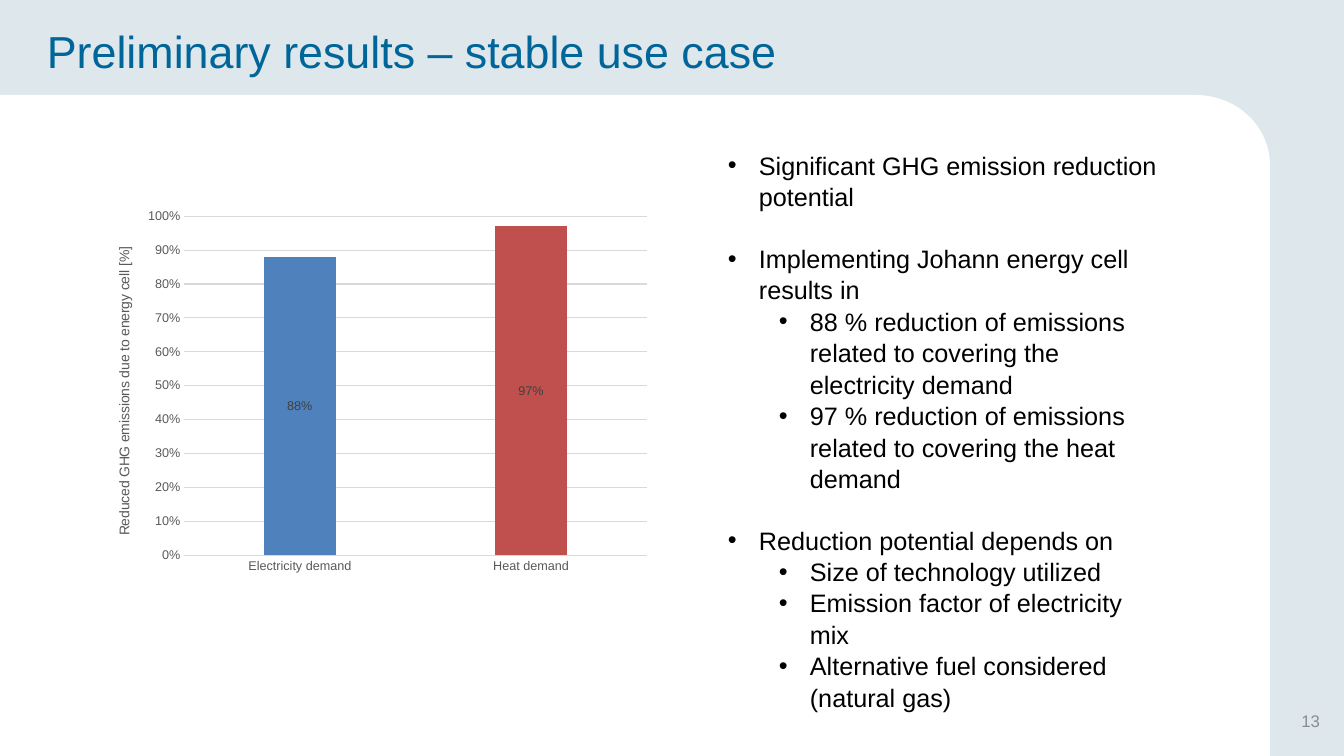
from lxml.etree import SubElement
from pptx import Presentation
from pptx.chart.data import CategoryChartData
from pptx.dml.color import RGBColor
from pptx.enum.chart import XL_CHART_TYPE, XL_LABEL_POSITION, XL_TICK_MARK
from pptx.enum.shapes import MSO_SHAPE
from pptx.enum.text import MSO_ANCHOR, PP_ALIGN
from pptx.oxml.ns import qn
from pptx.util import Emu, Pt

EMU_PER_PX = 914400 / 100.8
FONT = "Arial"
AXIS_GRAY = "595959"
GRID_GRAY = "D9D9D9"
FINDINGS = [
    ("Significant GHG emission reduction potential", []),
    ("Implementing Johann energy cell results in", [
        "88 % reduction of emissions related to covering the electricity demand",
        "97 % reduction of emissions related to covering the heat demand",
    ]),
    ("Reduction potential depends on", [
        "Size of technology utilized",
        "Emission factor of electricity mix",
        "Alternative fuel considered (natural gas)",
    ]),
]


def px(length):
    return Emu(round(length * EMU_PER_PX))


def box(*lengths):
    return [px(length) for length in lengths]


def color(value):
    return RGBColor.from_string(value)


def style_font(font, size, value):
    font.name = FONT
    font.size = Pt(size)
    font.bold = False
    font.color.rgb = color(value)


def add_white_shape(slide, kind, bounds):
    shape = slide.shapes.add_shape(kind, *box(*bounds))
    shape.shadow.inherit = False
    shape.fill.solid()
    shape.fill.fore_color.rgb = color("FFFFFF")
    shape.line.fill.background()


def add_text_frame(slide, bounds, anchor):
    frame = slide.shapes.add_textbox(*box(*bounds)).text_frame
    frame.word_wrap = True
    frame.vertical_anchor = anchor
    return frame


def add_label(slide, bounds, text, size, value, alignment=PP_ALIGN.LEFT):
    paragraph = add_text_frame(slide, bounds, MSO_ANCHOR.MIDDLE).paragraphs[0]
    paragraph.text = text
    paragraph.alignment = alignment
    style_font(paragraph.font, size, value)


def write_bullet(paragraph, text, level):
    paragraph.text = text
    paragraph.level = level
    paragraph.line_spacing = 1.04
    properties = paragraph._p.get_or_add_pPr()
    properties.set("marL", str(px(31 + 51 * level)))
    properties.set("indent", str(px(-31)))
    SubElement(properties, qn("a:buFont"), typeface=FONT)
    SubElement(properties, qn("a:buChar"), char="•")
    style_font(paragraph.font, 18, "000000")


def add_findings(slide, bounds):
    frame = add_text_frame(slide, bounds, MSO_ANCHOR.TOP)
    for index, (finding, details) in enumerate(FINDINGS):
        paragraph = frame.add_paragraph() if index else frame.paragraphs[0]
        if index:
            paragraph.space_before = Pt(21.6)
        write_bullet(paragraph, finding, 0)
        for detail in details:
            write_bullet(frame.add_paragraph(), detail, 1)


def place_plot(chart, x, y, w, h):
    plot_area = chart._chartSpace.chart.plotArea
    layout = plot_area.find(qn("c:layout"))
    if layout is None:
        layout = SubElement(plot_area, qn("c:layout"))
        plot_area.insert(0, layout)
    manual = SubElement(layout, qn("c:manualLayout"))
    settings = dict(layoutTarget="inner", xMode="edge", yMode="edge", x=x, y=y, w=w, h=h)
    for name, value in settings.items():
        SubElement(manual, qn(f"c:{name}"), val=str(value))


def style_line(line, value):
    line.color.rgb = color(value)
    line.width = Pt(0.75)


def style_axes(chart):
    category_axis, value_axis = chart.category_axis, chart.value_axis
    for axis in (category_axis, value_axis):
        axis.major_tick_mark = axis.minor_tick_mark = XL_TICK_MARK.NONE
        style_font(axis.tick_labels.font, 9, AXIS_GRAY)
    style_line(category_axis.format.line, GRID_GRAY)
    value_axis.format.line.fill.background()
    style_line(value_axis.major_gridlines.format.line, GRID_GRAY)
    value_axis.minimum_scale, value_axis.maximum_scale = 0, 1
    value_axis.major_unit = 0.1
    value_axis.tick_labels.number_format = "0%"
    value_axis.tick_labels.number_format_is_linked = False
    title = value_axis.axis_title.text_frame
    title.text = "Reduced GHG emissions due to energy cell [%]"
    style_font(title.paragraphs[0].font, 10, AXIS_GRAY)


def add_reduction_chart(slide, bounds):
    data = CategoryChartData(number_format="0%")
    data.categories = ["Electricity demand", "Heat demand"]
    data.add_series("Series 1", [0.88, 0.97])
    chart = slide.shapes.add_chart(XL_CHART_TYPE.COLUMN_CLUSTERED, *box(*bounds), data).chart
    chart.has_legend = False
    chart.has_title = False
    style_font(chart.font, 10, "000000")
    style_axes(chart)
    place_plot(chart, 0.16, 0.04, 0.82, 0.89)

    plot = chart.plots[0]
    plot.vary_by_categories = False
    plot.gap_width = 219
    plot.overlap = -27
    series = plot.series[0]
    for part, value in ((series, "4F81BD"), (series.points[1], "C0504D")):
        part.format.fill.solid()
        part.format.fill.fore_color.rgb = color(value)
    labels = series.data_labels
    labels.show_value = True
    labels.position = XL_LABEL_POSITION.CENTER
    labels.number_format = "0%"
    labels.number_format_is_linked = False
    style_font(labels.font, 9, "404040")


def main():
    presentation = Presentation()
    presentation.slide_width, presentation.slide_height = box(1344, 756)
    slide = presentation.slides.add_slide(presentation.slide_layouts[6])
    slide.background.fill.solid()
    slide.background.fill.fore_color.rgb = color("DEE7EC")

    add_white_shape(slide, MSO_SHAPE.RECTANGLE, (0, 95, 1198, 661))
    add_white_shape(slide, MSO_SHAPE.OVAL, (1121, 95, 149, 140))
    add_white_shape(slide, MSO_SHAPE.RECTANGLE, (720, 163, 550, 593))
    add_label(slide, (37, 0, 1148, 101), "Preliminary results – stable use case", 32, "006699")
    add_label(slide, (1017, 701, 313, 40), "13", 12, "8C8C8C", PP_ALIGN.RIGHT)
    add_reduction_chart(slide, (94, 201, 564, 381))
    add_findings(slide, (718, 144, 450, 621))
    presentation.save("out.pptx")


if __name__ == "__main__":
    main()
